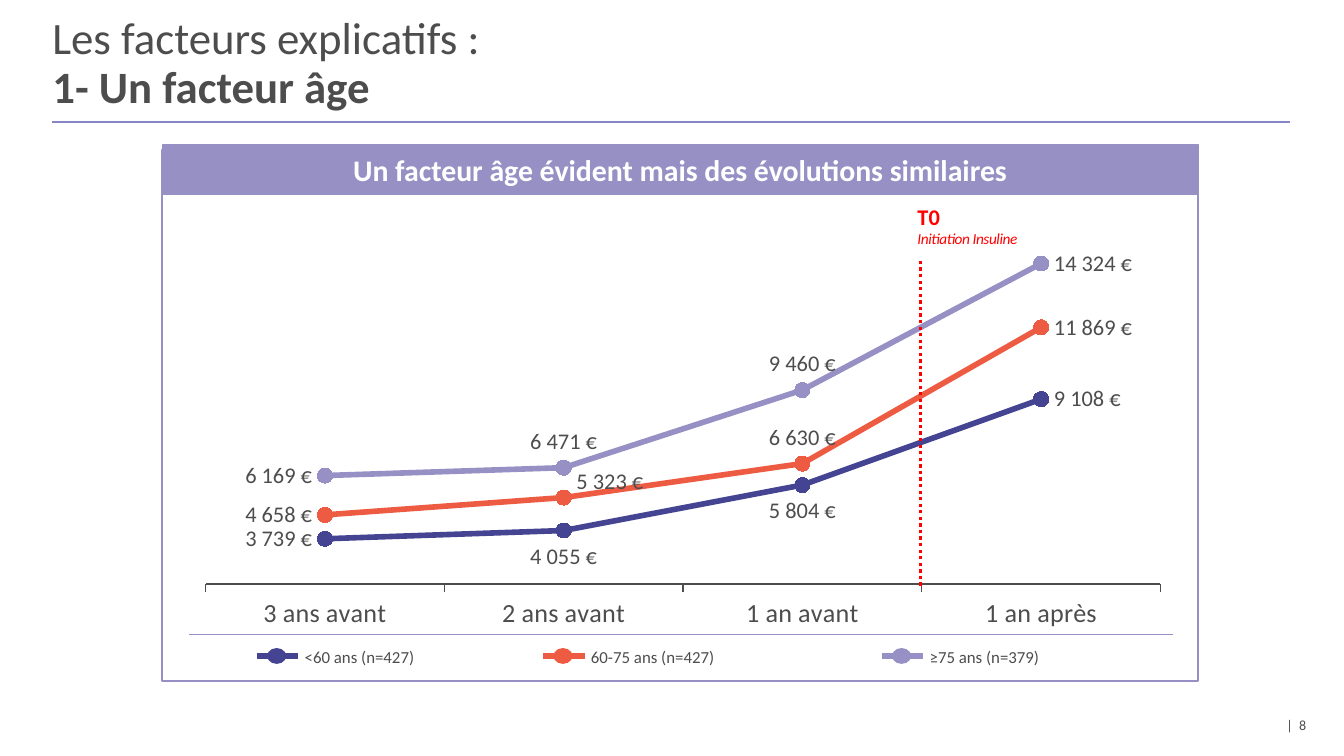
from dataclasses import dataclass

from lxml import etree
from pptx import Presentation, util as u
from pptx.chart.data import CategoryChartData
from pptx.dml.color import RGBColor
from pptx.enum import chart as charts, dml, shapes, text
from pptx.oxml.ns import qn

COLORS = {
    "text": "4D4D4D", "rule": "8686C7", "lilac": "9690C4", "navy": "444492",
    "coral": "ED5B43", "red": "FF0000", "white": "FFFFFF",
}
FONT = "Calibri"
EURO_FORMAT = '#\\ ##0\\ "€"'
CATEGORIES = ["3 ans avant", "2 ans avant", "1 an avant", "1 an après"]
POSITION = charts.XL_LABEL_POSITION
LEFT, RIGHT, ABOVE, BELOW = POSITION.LEFT, POSITION.RIGHT, POSITION.ABOVE, POSITION.BELOW


@dataclass
class AgeGroup:
    label: str
    color: str
    costs: tuple
    positions: tuple
    legend_left: float
    legend_width: float


AGE_GROUPS = [
    AgeGroup("<60 ans (n=427)", "navy", (3739, 4055, 5804, 9108),
             (LEFT, BELOW, BELOW, RIGHT), 4.85, 2.59),
    AgeGroup("60-75 ans (n=427)", "coral", (4658, 5323, 6630, 11869),
             (LEFT, RIGHT, ABOVE, RIGHT), 10.26, 2.87),
    AgeGroup("≥75 ans (n=379)", "lilac", (6169, 6471, 9460, 14324),
             (LEFT, ABOVE, ABOVE, RIGHT), 16.66, 2.59),
]


def rgb(name: str) -> RGBColor:
    return RGBColor.from_string(COLORS[name])


def set_font(font, size: float, color: str = "text", bold=None, face: str = FONT) -> None:
    font.name, font.size, font.bold = face, u.Pt(size), bold
    font.color.rgb = rgb(color)


def add_line(page, x1: float, y1: float, x2: float, y2: float, color: str, width: float):
    line = page.shapes.add_connector(shapes.MSO_CONNECTOR.STRAIGHT,
                                     u.Cm(x1), u.Cm(y1), u.Cm(x2), u.Cm(y2))
    line.line.color.rgb = rgb(color)
    line.line.width = u.Pt(width)
    etree.SubElement(line._element.spPr, qn("a:effectLst"))
    return line


def add_filled(page, kind, left: float, top: float, width: float, height: float,
               fill: str, outline=None, weight: float = 1):
    shape = page.shapes.add_shape(kind, u.Cm(left), u.Cm(top), u.Cm(width), u.Cm(height))
    shape.shadow.inherit = False
    shape.fill.solid()
    shape.fill.fore_color.rgb = rgb(fill)
    if outline:
        shape.line.color.rgb = rgb(outline)
        shape.line.width = u.Pt(weight)
    else:
        shape.line.fill.background()
    return shape


def add_text(page, left: float, top: float, width: float, height: float, wrap: bool = True):
    box = page.shapes.add_textbox(u.Cm(left), u.Cm(top), u.Cm(width), u.Cm(height))
    box.text_frame.word_wrap = wrap
    return box.text_frame


def clear_margins(frame) -> None:
    frame.margin_left = frame.margin_right = frame.margin_top = frame.margin_bottom = 0


def add_two_lines(para, first: str, second: str):
    spans = [para.add_run()]
    para.add_line_break()
    spans.append(para.add_run())
    spans[0].text, spans[1].text = first, second
    return spans


def add_layout(parent, index: int, **values) -> None:
    """Insert a manual layout at the given child index of a chart element."""
    layout = etree.Element(qn("c:layout"))
    manual = etree.SubElement(layout, qn("c:manualLayout"))
    for tag, value in values.items():
        etree.SubElement(manual, qn(f"c:{tag}")).set("val", str(value))
    parent.insert(index, layout)


def add_cost_chart(page) -> None:
    data = CategoryChartData(number_format=EURO_FORMAT)
    data.categories = CATEGORIES
    for group in AGE_GROUPS:
        data.add_series(group.label, group.costs)
    chart = page.shapes.add_chart(charts.XL_CHART_TYPE.LINE_MARKERS, u.Cm(3.51), u.Cm(4.5),
                                  u.Cm(18.8), u.Cm(7.52), data).chart
    chart.has_legend = chart.has_title = False
    set_font(chart.font, 10, "navy", face="Arial")

    # Axes and plot area
    values = chart.value_axis
    values.minimum_scale, values.maximum_scale = 2000, 15000
    values.has_major_gridlines = values.visible = False
    axis = chart.category_axis
    axis.major_tick_mark = charts.XL_TICK_MARK.OUTSIDE
    axis.format.line.color.rgb = rgb("text")
    axis.format.line.width = u.Pt(0.75)
    set_font(axis.tick_labels.font, 14)
    plot_area = chart._chartSpace.chart.plotArea
    for old in plot_area.findall(qn("c:layout")):
        plot_area.remove(old)
    add_layout(plot_area, 0, layoutTarget="inner", xMode="edge", yMode="edge",
               x=0.02, y=0.02, w=0.96, h=0.85)

    # Series and value labels
    plot = chart.plots[0]
    plot.vary_by_categories = False
    for series, group in zip(plot.series, AGE_GROUPS):
        series.smooth = False
        series.format.line.color.rgb = rgb(group.color)
        series.format.line.width = u.Pt(3)
        series.marker.style = charts.XL_MARKER_STYLE.CIRCLE
        series.marker.size = 8
        series.marker.format.fill.solid()
        series.marker.format.fill.fore_color.rgb = rgb(group.color)
        series.marker.format.line.color.rgb = rgb(group.color)
        labels = series.data_labels
        labels.show_value = True
        labels.number_format, labels.number_format_is_linked = EURO_FORMAT, False
        labels.position = ABOVE
        set_font(labels.font, 12)
        for index, position in enumerate(group.positions):
            label = series.points[index].data_label
            set_font(label.font, 12)
            label.position = position
    # Lift the second label of the middle group clear of its line
    raised = plot.series[1].data_labels._element.findall(qn("c:dLbl"))[1]
    add_layout(raised, 1, x=0, y=-0.04)


def add_legend_entry(page, group: AgeGroup) -> None:
    left = group.legend_left
    para = add_text(page, left + 0.66, 12.12, group.legend_width, 0.64, wrap=False).paragraphs[0]
    para.text = group.label
    para.line_spacing = u.Pt(10.5)
    set_font(para.font, 9)
    add_line(page, left, 12.4, left + 0.79, 12.4, group.color, 3)
    add_filled(page, shapes.MSO_SHAPE.OVAL, left + 0.2, 12.25, 0.36, 0.3, group.color)


def main() -> None:
    deck = Presentation()
    deck.slide_width, deck.slide_height = u.Cm(25.4), u.Cm(14.29)
    page = deck.slides.add_slide(deck.slide_layouts[5])

    # Title, rule and page number
    title = page.shapes.title
    title.left, title.top, title.width, title.height = (
        u.Cm(0.99), u.Cm(0.33), u.Cm(23.77), u.Cm(1.75))
    frame = title.text_frame
    clear_margins(frame)
    frame.auto_size = text.MSO_AUTO_SIZE.NONE
    frame.vertical_anchor = text.MSO_ANCHOR.MIDDLE
    para = frame.paragraphs[0]
    para.alignment = text.PP_ALIGN.LEFT
    para.line_spacing = u.Pt(26)
    set_font(para.font, 24)
    add_two_lines(para, "Les facteurs explicatifs :", "1- Un facteur âge")[1].font.bold = True
    add_line(page, 0.99, 2.31, 24.38, 2.31, "rule", 1)
    frame = add_text(page, 24.31, 13.54, 1.35, 0.48)
    clear_margins(frame)
    frame.text = "|  8"
    set_font(frame.paragraphs[0].font, 7.5)

    # Frame, chart and legend
    add_filled(page, shapes.MSO_SHAPE.RECTANGLE, 3.07, 2.84, 19.58, 10.03, "white", "lilac")
    add_line(page, 3.58, 11.99, 22.17, 11.99, "lilac", 0.75)
    add_cost_chart(page)
    for group in AGE_GROUPS:
        add_legend_entry(page, group)

    # Insulin start marker
    para = add_text(page, 17.09, 3.71, 3.07, 1.12).paragraphs[0]
    start, caption = add_two_lines(para, "T0", "Initiation Insuline")
    set_font(start.font, 12, "red", True)
    set_font(caption.font, 8.2, "red", False)
    caption.font.italic = True
    caption.font._element.set("spc", "-20")
    marker = add_line(page, 17.4, 11.07, 17.4, 4.93, "red", 1.75)
    marker.line.dash_style = dml.MSO_LINE.ROUND_DOT

    # Header band
    band = add_filled(page, shapes.MSO_SHAPE.RECTANGLE, 3.07, 2.74, 19.58, 0.94,
                      "lilac", "lilac", 0.75)
    band.text_frame.vertical_anchor = text.MSO_ANCHOR.MIDDLE
    para = band.text_frame.paragraphs[0]
    para.text = "Un facteur âge évident mais des évolutions similaires"
    para.alignment = text.PP_ALIGN.CENTER
    set_font(para.font, 16, "white", True)

    deck.save("out.pptx")


if __name__ == "__main__":
    main()
